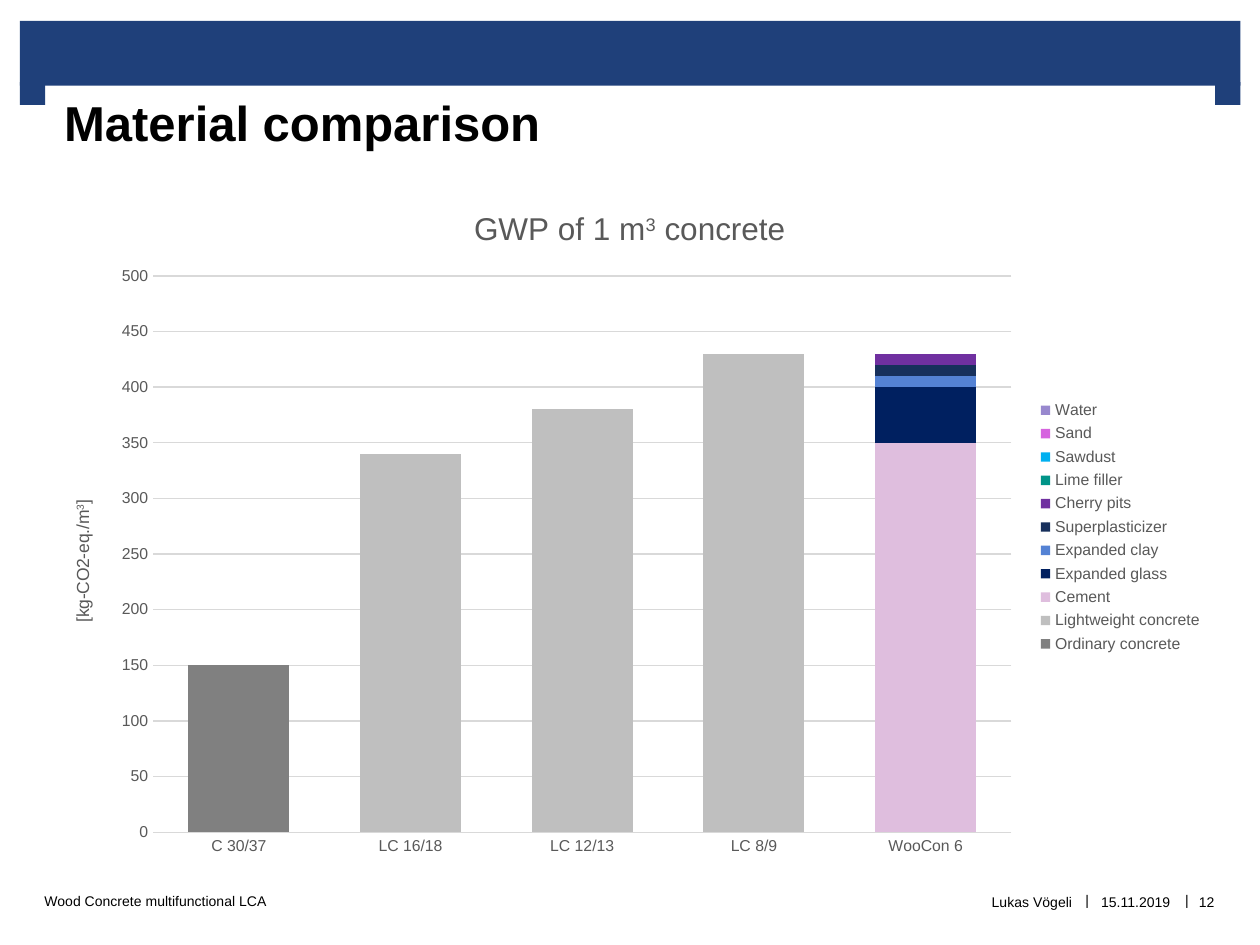
"""Build the material comparison slide with its stacked GWP column chart."""
from typing import NamedTuple

from lxml import etree
from pptx import Presentation
from pptx import util as u
from pptx.chart import data as chart_data
from pptx.dml import color
from pptx.enum import chart as ch
from pptx.enum import shapes, text
from pptx.oxml import ns

FONT = "Arial"
COLORS = {
    "band": "1F407A", "white": "FFFFFF", "ink": "000000", "label": "595959",
    "grid": "D9D9D9", "Ordinary concrete": "808080",
    "Lightweight concrete": "BFBFBF", "Cement": "DFBEDE",
    "Expanded glass": "002060", "Expanded clay": "5482D4",
    "Superplasticizer": "17305C", "Cherry pits": "7030A0",
    "Lime filler": "009488", "Sawdust": "00B0F0", "Sand": "D663DF",
    "Water": "9888CE",
}


class Box(NamedTuple):
    left: float
    top: float
    width: float
    height: float


class FooterItem(NamedTuple):
    words: str
    box: Box
    align: text.PP_ALIGN


BANDS = [
    Box(11.4, 12, 697.5, 37),
    Box(11.4, 47, 14.4, 13),
    Box(694.4, 47, 14.4, 13),
]
FOOTER = [
    FooterItem("Wood Concrete multifunctional LCA", Box(25.4, 496.6, 335, 36.5), text.PP_ALIGN.LEFT),
    FooterItem("Lukas Vögeli", Box(360, 497, 252.7, 36.5), text.PP_ALIGN.RIGHT),
    FooterItem("|", Box(617, 496.2, 8.6, 36.5), text.PP_ALIGN.CENTER),
    FooterItem("15.11.2019", Box(625, 497, 48, 36.5), text.PP_ALIGN.CENTER),
    FooterItem("|", Box(674, 496.2, 8.6, 36.5), text.PP_ALIGN.CENTER),
    FooterItem("12", Box(679, 497, 21, 36.5), text.PP_ALIGN.CENTER),
]
CONCRETES = ["C 30/37", "LC 16/18", "LC 12/13", "LC 8/9", "WooCon 6"]
WOOCON_PARTS = {
    "Cement": 350, "Expanded glass": 50, "Expanded clay": 10,
    "Superplasticizer": 10, "Cherry pits": 10, "Lime filler": 0,
    "Sawdust": 0, "Sand": 0, "Water": 0,
}
GWP = {
    "Ordinary concrete": [150, None, None, None, None],
    "Lightweight concrete": [None, 340, 380, 430, None],
    **{part: [None] * 4 + [value] for part, value in WOOCON_PARTS.items()},
}


def rgb(name: str) -> color.RGBColor:
    return color.RGBColor.from_string(COLORS[name])


def points(box: Box) -> list[u.Pt]:
    return [u.Pt(length) for length in box]


def style(font, size: float, name: str, bold: bool = False) -> None:
    font.name, font.size, font.bold = FONT, u.Pt(size), bold
    font.color.rgb = rgb(name)


def add_run(paragraph, words: str, size: float, name: str, bold: bool = False, raised: bool = False) -> None:
    run = paragraph.add_run()
    run.text = words
    style(run.font, size, name, bold)
    if raised:
        run.font._element.set("baseline", "30000")


def set_margins(frame, left: float, top: float, right: float, bottom: float) -> None:
    frame.margin_left, frame.margin_top = u.Pt(left), u.Pt(top)
    frame.margin_right, frame.margin_bottom = u.Pt(right), u.Pt(bottom)


def add_band(slide, box: Box) -> None:
    band = slide.shapes.add_shape(shapes.MSO_SHAPE.RECTANGLE, *points(box))
    band.shadow.inherit = False
    band.fill.solid()
    band.fill.fore_color.rgb = rgb("band")
    band.line.fill.background()


def add_footer_item(slide, item: FooterItem) -> None:
    frame = slide.shapes.add_textbox(*points(item.box)).text_frame
    frame.word_wrap = False
    frame.vertical_anchor = text.MSO_ANCHOR.MIDDLE
    set_margins(frame, 0, 0, 0, 0)
    frame.paragraphs[0].alignment = item.align
    add_run(frame.paragraphs[0], item.words, 8, "ink")


def set_title(slide) -> None:
    title = slide.shapes.title
    title.left, title.top, title.width, title.height = points(Box(25.2, 48.6, 669, 76.4))
    title.fill.solid()
    title.fill.fore_color.rgb = rgb("white")
    frame = title.text_frame
    frame.word_wrap = True
    frame.auto_size = text.MSO_AUTO_SIZE.NONE
    frame.vertical_anchor = text.MSO_ANCHOR.TOP
    set_margins(frame, 11.5, 4.3, 11.5, 0)
    frame.paragraphs[0].alignment = text.PP_ALIGN.LEFT
    add_run(frame.paragraphs[0], "Material comparison", 28, "ink", bold=True)


def place(element, index: int, target: str = "", **percents: float) -> None:
    for old in element.findall(ns.qn("c:layout")):
        element.remove(old)
    layout = etree.Element(ns.qn("c:layout"))
    manual = etree.SubElement(layout, ns.qn("c:manualLayout"))
    settings = {"layoutTarget": target} if target else {}
    settings |= {"xMode": "edge", "yMode": "edge"}
    settings |= {side: str(percent / 100) for side, percent in percents.items()}
    for tag, value in settings.items():
        etree.SubElement(manual, ns.qn(f"c:{tag}")).set("val", value)
    element.insert(index, layout)


def write_heading(heading, size: float, *parts: str) -> None:
    paragraph = heading.text_frame.paragraphs[0]
    for position, part in enumerate(parts):
        add_run(paragraph, part, size, "label", raised=position % 2 == 1)


def style_axes(chart) -> None:
    for axis in (chart.category_axis, chart.value_axis):
        axis.major_tick_mark = axis.minor_tick_mark = ch.XL_TICK_MARK.NONE
        style(axis.tick_labels.font, 9, "label")
    grid = chart.value_axis.major_gridlines.format.line
    for line in (chart.category_axis.format.line, grid):
        line.color.rgb = rgb("grid")
        line.width = u.Pt(0.75)
    values = chart.value_axis
    values.minimum_scale, values.maximum_scale, values.major_unit = 0, 500, 50
    values.format.line.fill.background()
    write_heading(values.axis_title, 10, "[kg-CO2-eq./m", "3", "]")
    place(values.axis_title._element, 1, x=1.95, y=45.5)
    place(values._element.getparent(), 0, "inner", x=9.3, y=13.3, w=73.3, h=81.3)


def add_gwp_chart(slide) -> None:
    gwp = chart_data.CategoryChartData()
    gwp.categories = CONCRETES
    for material, values in GWP.items():
        gwp.add_series(material, values)
    frame = slide.shapes.add_chart(
        ch.XL_CHART_TYPE.COLUMN_STACKED, *points(Box(25.2, 105.7, 669.3, 391)), gwp)
    chart = frame.chart
    style(chart.font, 10, "ink")
    chart.has_title = True
    write_heading(chart.chart_title, 18, "GWP of 1 m", "3", " concrete")
    chart.chart_title.include_in_layout = False
    chart.has_legend = True
    chart.legend.position = ch.XL_LEGEND_POSITION.RIGHT
    chart.legend.include_in_layout = False
    style(chart.legend.font, 9, "label")
    plot = chart.plots[0]
    plot.gap_width, plot.overlap, plot.vary_by_categories = 70, 100, False
    for series in plot.series:
        series.format.fill.solid()
        series.format.fill.fore_color.rgb = rgb(series.name)
    style_axes(chart)


def main() -> None:
    deck = Presentation()
    deck.slide_width, deck.slide_height = u.Pt(720), u.Pt(540)
    slide = deck.slides.add_slide(deck.slide_layouts[5])
    set_title(slide)
    for box in BANDS:
        add_band(slide, box)
    for item in FOOTER:
        add_footer_item(slide, item)
    add_gwp_chart(slide)
    deck.save("out.pptx")


if __name__ == "__main__":
    main()
